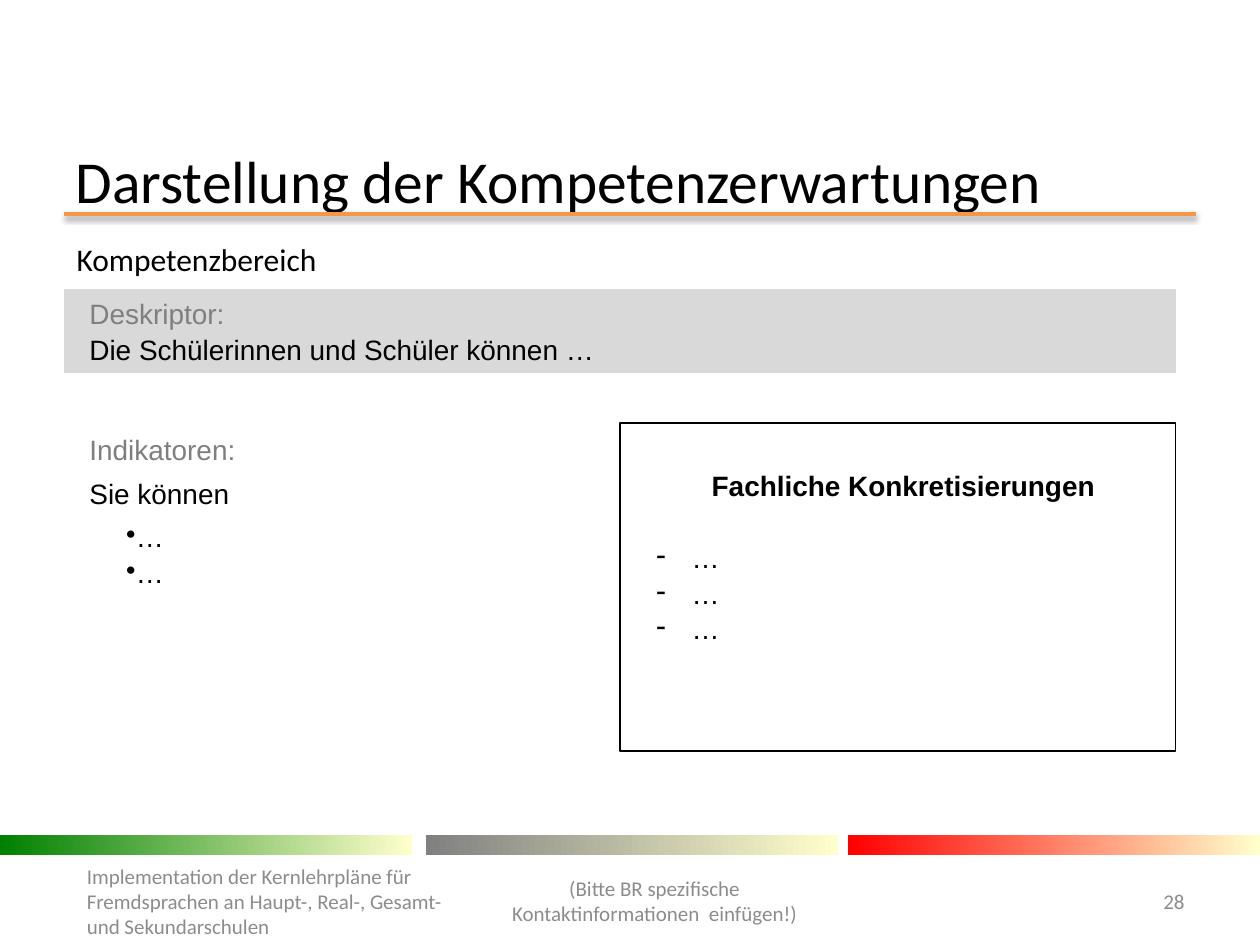
import pptx
import pptx.dml.color
import pptx.enum.shapes
import pptx.enum.text
import pptx.oxml
import pptx.oxml.ns
import pptx.util
from pptx.util import Inches

ALIGN = pptx.enum.text.PP_ALIGN
ANCHOR = pptx.enum.text.MSO_ANCHOR
NO_STYLE_NO_GRID = "{2D5ABB26-0587-4C30-8999-92F81FD0307C}"
BLACK, GREY, FOOTER_GREY = "000000", "7F7F7F", "8C8C8C"


def rgb(value):
    return pptx.dml.color.RGBColor.from_string(value)


def add_xml(parent, xml):
    ns = pptx.oxml.ns.nsdecls("a")
    parent.append(pptx.oxml.parse_xml(xml.replace("/>", f" {ns}/>", 1)
                                      if xml.endswith("/>") and xml.count("<") == 1
                                      else xml.replace(">", f" {ns}>", 1)))


class Deck:
    heading_font = "Calibri"
    table_font = "Arial"
    table_size = 16

    def __init__(self, prs):
        self.s = prs.slides.add_slide(prs.slide_layouts[5])

    def run(self, p, text, font, size, color, bold=False):
        r = p.add_run()
        r.text = text
        r.font.name, r.font.size, r.font.bold = font, pptx.util.Pt(size), bold
        r.font.color.rgb = rgb(color)

    def fill_frame(self, sp, text, size, color, align, anchor):
        tf = sp.text_frame
        tf.word_wrap = True
        tf.auto_size = pptx.enum.text.MSO_AUTO_SIZE.NONE
        tf.vertical_anchor = anchor
        p = tf.paragraphs[0]
        p.alignment = align
        self.run(p, text, self.heading_font, size, color)

    def title(self, text, x, y, w, h):
        sp = self.s.shapes.title
        sp.left, sp.top, sp.width, sp.height = map(Inches, (x, y, w, h))
        self.fill_frame(sp, text, 34, BLACK, ALIGN.LEFT, ANCHOR.MIDDLE)

    def text(self, text, x, y, w, h, size=12, color=FOOTER_GREY,
             align=ALIGN.LEFT, anchor=ANCHOR.MIDDLE):
        sp = self.s.shapes.add_textbox(*map(Inches, (x, y, w, h)))
        self.fill_frame(sp, text, size, color, align, anchor)

    def rule(self, x1, x2, y, color):
        """Horizontal line with a soft shadow below it."""
        line = self.s.shapes.add_connector(
            pptx.enum.shapes.MSO_CONNECTOR.STRAIGHT,
            Inches(x1), Inches(y), Inches(x2), Inches(y))
        line.line.color.rgb = rgb(color)
        line.line.width = pptx.util.Pt(2)
        add_xml(line._element.spPr,
                '<a:effectLst><a:outerShdw blurRad="39370" dist="20320" dir="5400000">'
                '<a:srgbClr val="000000"><a:alpha val="38000"/></a:srgbClr>'
                '</a:outerShdw></a:effectLst>')

    def rect(self, x, y, w, h):
        sp = self.s.shapes.add_shape(pptx.enum.shapes.MSO_SHAPE.RECTANGLE,
                                     *map(Inches, (x, y, w, h)))
        sp.shadow.inherit = False
        return sp

    def gradient_bar(self, x, y, w, h, start, end):
        sp = self.rect(x, y, w, h)
        sp.line.fill.background()
        sp.fill.gradient()
        sp.fill.gradient_angle = 0
        for stop, color in zip(sp.fill.gradient_stops, (start, end)):
            stop.color.rgb = rgb(color)

    def frame(self, x, y, w, h):
        sp = self.rect(x, y, w, h)
        sp.fill.background()
        sp.line.color.rgb = rgb(BLACK)
        sp.line.width = pptx.util.Pt(1)

    def table(self, x, y, cols, rows):
        table = self.s.shapes.add_table(
            len(rows), len(cols), Inches(x), Inches(y),
            Inches(sum(cols)), Inches(sum(rows))).table
        table.first_row = table.horz_banding = False
        table._tbl.tblPr[0].text = NO_STYLE_NO_GRID
        for col, width in zip(table.columns, cols):
            col.width = Inches(width)
        for row, height in zip(table.rows, rows):
            row.height = Inches(height)
        return table

    def cell(self, cell, lines=(), fill=None, top=0.05):
        """Each line is (text, options for cell_line)."""
        if fill:
            cell.fill.solid()
            cell.fill.fore_color.rgb = rgb(fill)
        else:
            cell.fill.background()
        cell.margin_top = Inches(top)
        tf = cell.text_frame
        for i, (text, options) in enumerate(lines):
            p = tf.add_paragraph() if i else tf.paragraphs[0]
            self.cell_line(p, text, **options)

    def cell_line(self, p, text, color=BLACK, bold=False, left=0.1, indent=0,
                  bullet=None, before=0, align=ALIGN.LEFT):
        pPr = p._p.get_or_add_pPr()
        pPr.set("marL", str(Inches(left)))
        pPr.set("indent", str(Inches(indent)))
        if bullet:
            add_xml(pPr, f'<a:buChar char="{bullet}"/>')
        p.alignment = align
        p.line_spacing = 1.15
        if before:
            p.space_before = pptx.util.Pt(before)
        self.run(p, text, self.table_font, self.table_size, color, bold)


def main():
    prs = pptx.Presentation()
    prs.slide_width, prs.slide_height = Inches(10), Inches(7.5)
    d = Deck(prs)

    d.rule(0.51, 9.49, 1.7, "F79646")
    for x, color in ((0, "008000"), (3.38, "808080"), (6.73, "FF0000")):
        d.gradient_bar(x, 6.63, 3.27, 0.16, color, "FFFFCC")

    d.title("Darstellung der Kompetenzerwartungen", 0.5, 1.23, 9, 0.39)
    d.text("28", 8.86, 6.95, 0.64, 0.4, align=ALIGN.RIGHT)

    table = d.table(0.51, 2.29, (4.5, 4.32), (0.67, 0.39, 3.42))
    for row in (0, 1):
        table.cell(row, 0).merge(table.cell(row, 1))
    d.cell(table.cell(0, 0), [
        ("Deskriptor:", dict(color=GREY)),
        ("Die Schülerinnen und Schüler können …", {}),
    ], fill="D9D9D9")
    d.cell(table.cell(1, 0), fill="FFFFFF")

    dot = dict(bullet="•", indent=0.29)
    d.cell(table.cell(2, 0), [
        ("Indikatoren:", dict(color=GREY)),
        ("Sie können", dict(before=5)),
        ("…", dict(dot, before=4)),
        ("…", dot),
    ])
    dash = dict(bullet="-", left=0.38, indent=-0.28)
    d.cell(table.cell(2, 1), [
        ("Fachliche Konkretisierungen", dict(bold=True, left=0, align=ALIGN.CENTER)),
        ("…", dict(dash, before=20.5)),
        ("…", dash),
        ("…", dash),
    ], top=0.34)

    d.text("Kompetenzbereich", 0.51, 1.86, 3.7, 0.4, size=18, color=BLACK,
           anchor=ANCHOR.TOP)
    d.frame(4.92, 3.36, 4.41, 2.6)
    d.text("Implementation der Kernlehrpläne für Fremdsprachen an "
           "Haupt-, Real-, Gesamt- und Sekundarschulen", 0.59, 6.81, 3.15, 0.68)
    d.text("(Bitte BR spezifische Kontaktinformationen  einfügen!)",
           3.74, 6.79, 2.91, 0.71, align=ALIGN.CENTER)
    prs.save("out.pptx")


if __name__ == "__main__":
    main()
